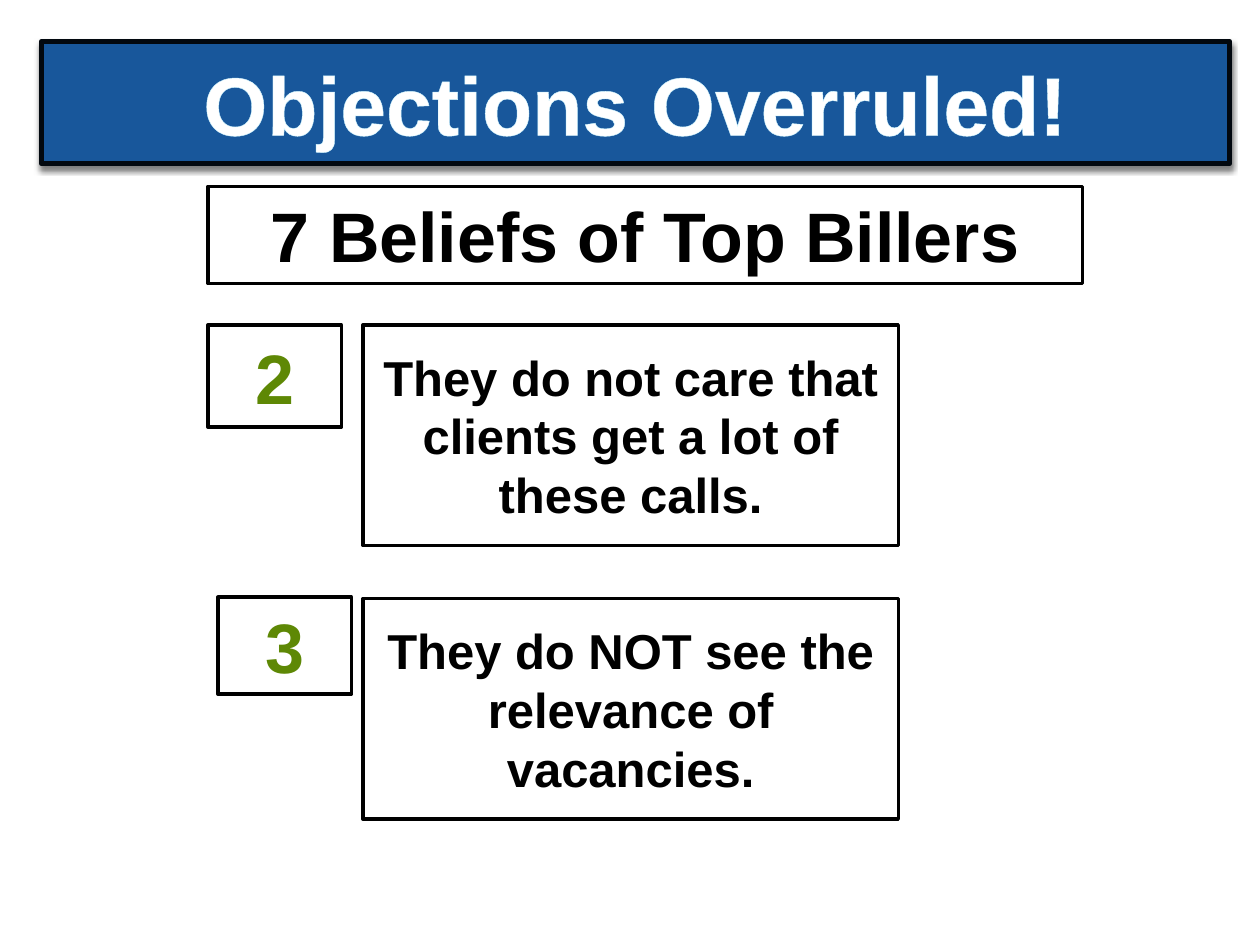
from lxml import etree
from pptx import Presentation
from pptx.dml.color import RGBColor
from pptx.enum.shapes import MSO_SHAPE
from pptx.enum.text import MSO_ANCHOR, PP_ALIGN
from pptx.oxml import parse_xml
from pptx.util import Emu, Pt

RECT = MSO_SHAPE.RECTANGLE
MIDDLE = MSO_ANCHOR.MIDDLE
CENTER = PP_ALIGN.CENTER

PX = 9144
BLUE = RGBColor(0x18, 0x57, 0x9B)
NAVY = RGBColor(0x02, 0x08, 0x0F)
PALE = RGBColor(0xCC, 0xF2, 0xFD)
GREEN = RGBColor(0x5E, 0x88, 0x05)
WHITE = RGBColor(0xFF, 0xFF, 0xFF)
BLACK = RGBColor(0x00, 0x00, 0x00)
NS = 'xmlns:a="http://schemas.openxmlformats.org/drawingml/2006/main"'


class Deck:
    """Holds the style and the current slide, and draws its boxes."""

    font = "Arial"

    def __init__(self, prs):
        self.slide = prs.slides.add_slide(prs.slide_layouts[6])

    def box(self, x, y, w, h, text, size, color=BLACK, fill=WHITE, line=BLACK, weight=2):
        s = self.slide.shapes.add_shape(RECT, *(Emu(v * PX) for v in (x, y, w, h)))
        s.shadow.inherit = False
        s.fill.solid()
        s.fill.fore_color.rgb = fill
        s.line.color.rgb = line
        s.line.width = Pt(weight)
        tf = s.text_frame
        tf.word_wrap = True
        tf.vertical_anchor = MIDDLE
        tf.text = text
        p = tf.paragraphs[0]
        p.alignment = CENTER
        font = p.runs[0].font
        font.name = self.font
        font.size = Pt(size)
        font.bold = True
        font.color.rgb = color
        return s

    def banner(self, x, y, w, h, text):
        s = self.box(x, y, w, h, text, 47, WHITE, BLUE, NAVY, 3)
        effects = s._element.spPr.find("{*}effectLst")
        shadow = parse_xml(
            f'<a:outerShdw {NS} blurRad="{Pt(3)}" dist="{Pt(2)}" dir="5400000" rotWithShape="0">'
            f'<a:srgbClr val="{BLACK}"><a:alpha val="50000"/></a:srgbClr></a:outerShdw>')
        effects.append(shadow)
        outline = etree.fromstring(
            f'<a:ln {NS} w="{Pt(1)}"><a:solidFill><a:srgbClr val="{PALE}"/></a:solidFill></a:ln>')
        s.text_frame.paragraphs[0].runs[0].font._element.insert(0, outline)

    def belief(self, y, text):
        self.box(288, y, 425, 175, text, 28)

    def number(self, x, y, h, text):
        self.box(x, y, 106, h, text, 40, GREEN)


def main():
    prs = Presentation()
    prs.slide_width, prs.slide_height = Emu(1000 * PX), Emu(750 * PX)
    deck = Deck(prs)
    deck.banner(33, 33, 943, 97, "Objections Overruled!")
    deck.box(165, 148, 694, 77, "7 Beliefs of Top Billers", 40)
    deck.belief(258, "They do not care that clients get a lot of these calls.")
    deck.belief(475, "They do NOT see the relevance of vacancies.")
    deck.number(165, 258, 81, "2")
    deck.number(173, 474, 77, "3")
    prs.save("out.pptx")


if __name__ == "__main__":
    main()
